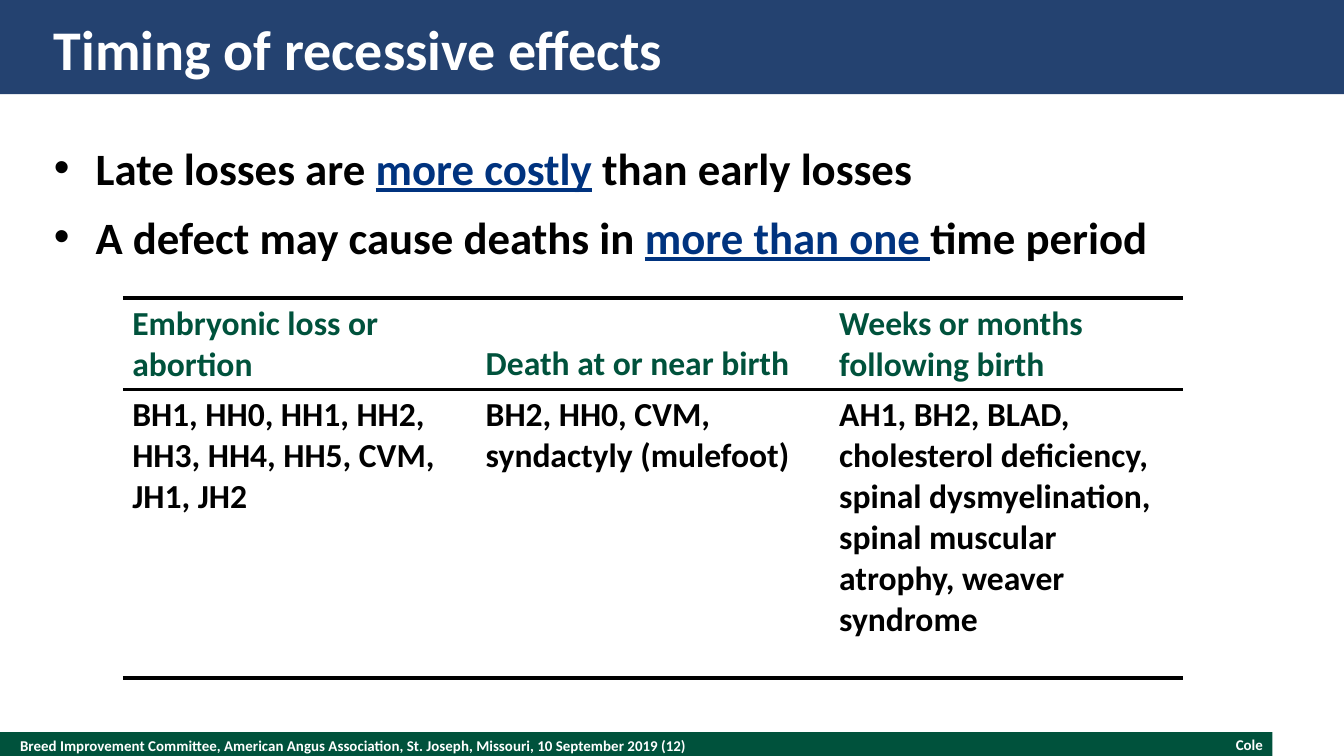
from pptx import Presentation
from pptx.dml.color import RGBColor
from pptx.enum.shapes import MSO_SHAPE as Shape
from pptx.enum.text import MSO_ANCHOR as Anchor, PP_ALIGN as Align
from pptx.oxml import parse_xml
from pptx.oxml.ns import nsdecls
from pptx.util import Cm, Pt

COLORS = {
    "navy": "244270",
    "green": "00523C",
    "blue": "00337F",
    "black": "000000",
    "white": "FFFFFF",
}
BULLETS = [
    [("Late losses are ", False), ("more costly", True), (" than early losses", False)],
    [("A defect may cause deaths in ", False), ("more than one ", True), ("time period", False)],
]
HEADERS = [
    "Embryonic loss or abortion",
    "Death at or near birth",
    "Weeks or months following birth",
]
DEFECTS = [
    "BH1, HH0, HH1, HH2, HH3, HH4, HH5, CVM, JH1, JH2",
    "BH2, HH0, CVM, syndactyly (mulefoot)",
    "AH1, BH2, BLAD, cholesterol deficiency, spinal dysmyelination, "
    "spinal muscular atrophy, weaver syndrome",
]


class SlideBuilder:
    """Draw styled elements on the current slide."""

    font_name = "Calibri"

    def __init__(self, page):
        self.page = page

    def color(self, name):
        return RGBColor.from_string(COLORS[name])

    def style(self, para, size, color):
        para.font.name = self.font_name
        para.font.size = Pt(size)
        para.font.bold = True
        para.font.color.rgb = self.color(color)

    def bar(self, left, top, width, height, color):
        bar = self.page.shapes.add_shape(
            Shape.RECTANGLE, Cm(left), Cm(top), Cm(width), Cm(height))
        bar.shadow.inherit = False
        bar.fill.solid()
        bar.fill.fore_color.rgb = self.color(color)
        bar.line.fill.background()

    def frame(self, left, top, width, height, anchor):
        box = self.page.shapes.add_textbox(Cm(left), Cm(top), Cm(width), Cm(height))
        frame = box.text_frame
        frame.word_wrap = True
        frame.vertical_anchor = anchor
        frame.margin_left = frame.margin_right = 0
        frame.margin_top = frame.margin_bottom = 0
        return frame

    def label(self, text, left, top, width, height, size, align=Align.LEFT):
        para = self.frame(left, top, width, height, Anchor.MIDDLE).paragraphs[0]
        para.text = text
        para.alignment = align
        self.style(para, size, "white")

    def bullets(self, items, left, top, width, height):
        frame = self.frame(left, top, width, height, Anchor.TOP)
        for index, item in enumerate(items):
            para = frame.add_paragraph() if index else frame.paragraphs[0]
            props = para._p.get_or_add_pPr()
            props.set("marL", str(Cm(0.79)))
            props.set("indent", str(Cm(-0.79)))
            props.append(parse_xml(f'<a:buFont {nsdecls("a")} typeface="Arial"/>'))
            props.append(parse_xml(f'<a:buChar {nsdecls("a")} char="•"/>'))
            para.line_spacing = Pt(25)
            para.space_after = Pt(12)
            self.style(para, 24, "black")
            for text, stressed in item:
                span = para.add_run()
                span.text = text
                if stressed:
                    span.font.underline = True
                    span.font.color.rgb = self.color("blue")

    def borders(self, cell):
        props = cell._tc.get_or_add_tcPr()
        for side in ("lnL", "lnR"):
            props.append(parse_xml(f'<a:{side} {nsdecls("a")} w="0"><a:noFill/></a:{side}>'))
        for side in ("lnT", "lnB"):
            props.append(parse_xml(
                f'<a:{side} {nsdecls("a")} w="{Pt(2.25)}"><a:solidFill>'
                f'<a:srgbClr val="{COLORS["black"]}"/></a:solidFill></a:{side}>'))

    def table(self, rows, left, top, width, heights):
        table = self.page.shapes.add_table(
            len(rows), len(rows[0]), Cm(left), Cm(top), Cm(width), Cm(sum(heights))).table
        table.first_row = table.horz_banding = False
        for index, (texts, height) in enumerate(zip(rows, heights)):
            table.rows[index].height = Cm(height)
            for column, text in enumerate(texts):
                cell = table.cell(index, column)
                self.borders(cell)
                cell.fill.background()
                cell.margin_left = cell.margin_right = Cm(0.18)
                cell.margin_top = cell.margin_bottom = Cm(0.1)
                cell.vertical_anchor = Anchor.TOP if index else Anchor.BOTTOM
                cell.text = text
                self.style(cell.text_frame.paragraphs[0], 18, "black" if index else "green")


def main():
    deck = Presentation()
    deck.slide_width, deck.slide_height = Cm(25.4), Cm(14.29)
    builder = SlideBuilder(deck.slides.add_slide(deck.slide_layouts[6]))
    builder.bar(0, 13.84, 24.05, 0.5, "green")
    builder.bar(0, 0, 25.4, 1.78, "navy")
    builder.label(
        "Breed Improvement Committee, American Angus Association, "
        "St. Joseph, Missouri, 10 September 2019 (12)",
        0.38, 13.84, 16.5, 0.5, 8)
    builder.label("Cole", 18.29, 13.9, 5.58, 0.33, 8, Align.RIGHT)
    builder.label("Timing of recessive effects", 1.02, 0.25, 23.36, 1.32, 30)
    builder.bullets(BULLETS, 1.02, 2.79, 23.36, 10.16)
    builder.table([HEADERS, DEFECTS], 2.32, 5.63, 20.04, [1.73, 5.46])
    deck.save("out.pptx")


if __name__ == "__main__":
    main()
